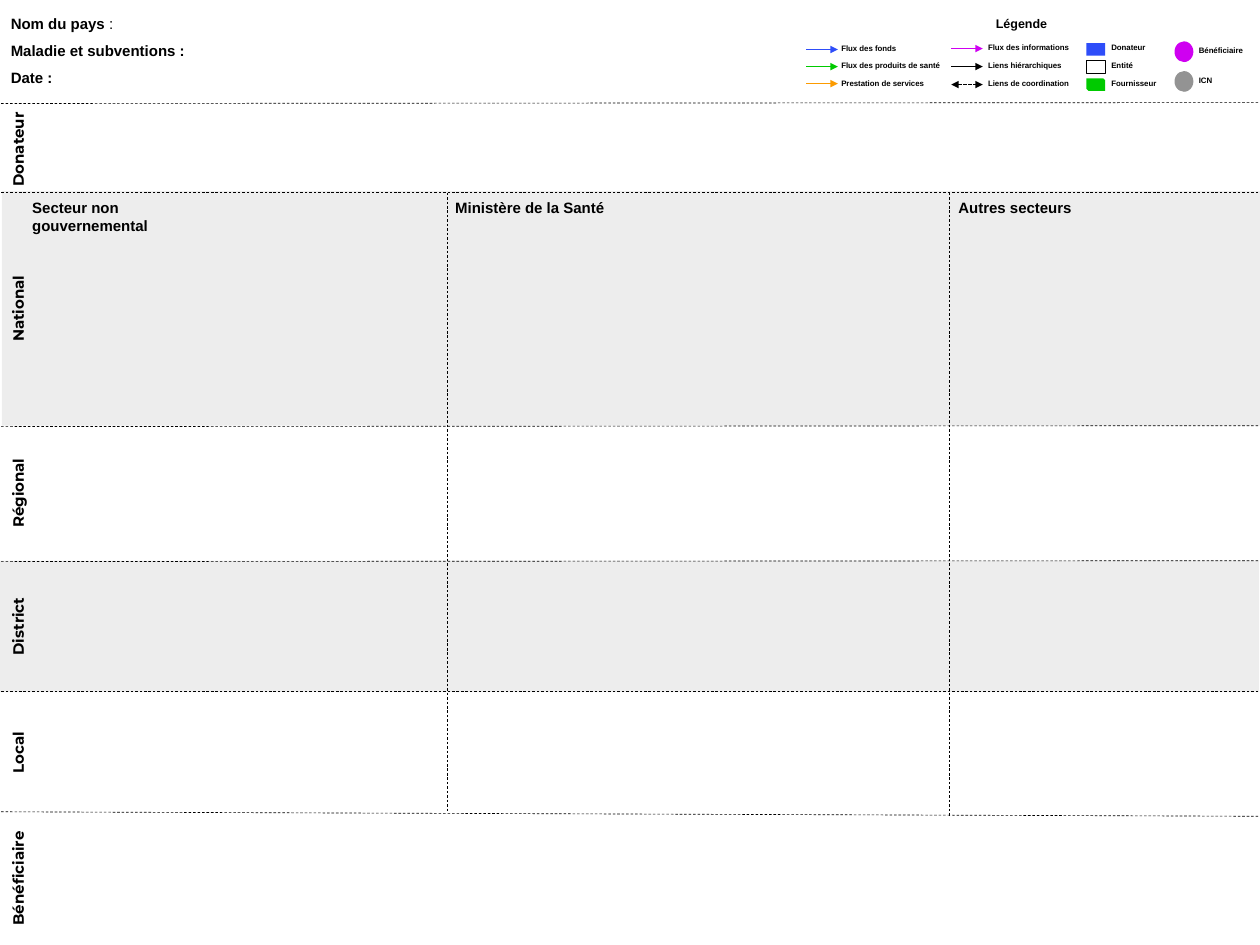
import pptx
import pptx.util
import pptx.dml.color
import pptx.enum.dml
import pptx.enum.shapes
import pptx.enum.text
import pptx.oxml
import pptx.oxml.ns

Inches = pptx.util.Inches
Pt = pptx.util.Pt
KIND = pptx.enum.shapes.MSO_SHAPE
LINK = pptx.enum.shapes.MSO_CONNECTOR
DASH = pptx.enum.dml.MSO_LINE
ALIGN = pptx.enum.text.PP_ALIGN
ANCHOR = pptx.enum.text.MSO_ANCHOR
BLACK, BLUE, GREEN = "000000", "2E4DF9", "00CA00"
ORANGE, PINK, GREY = "FC9B00", "CF00F1", "939393"


def paint(part, tone):
    """Give a fill or a line fill one solid colour."""
    part.solid()
    part.fore_color.rgb = pptx.dml.color.RGBColor.from_string(tone)


def put(item, vals):
    """Set attributes of an object from a dict."""
    for name, val in vals.items():
        setattr(item, name, val)


def add(node, tag, **vals):
    """Append a drawing element with attributes to a node."""
    child = pptx.oxml.parse_xml(f"<a:{tag} {pptx.oxml.ns.nsdecls('a')}/>")
    for name, val in vals.items():
        child.set(name, val)
    node.append(child)


def write(shapes, box, lines, size=12, font="Arial", frame={}, para={}, turn=0):
    """Place a text box; each line is a list of (text, bold) runs."""
    area = shapes.add_textbox(*map(Inches, box))
    area.rotation = turn
    put(area.text_frame, {"word_wrap": True, **frame})
    for num, runs in enumerate(lines):
        body = area.text_frame
        row = body.add_paragraph() if num else body.paragraphs[0]
        put(row, para)
        for text, bold in runs:
            run = row.add_run()
            run.text = text
            put(run.font, {"size": Pt(size), "name": font, "bold": bold})
            paint(run.font.fill, BLACK)


def shape(shapes, kind, box, fill=None, edge=None, alpha=None):
    """Place a preset shape with an optional fill, outline and opacity."""
    item = shapes.add_shape(kind, *map(Inches, box))
    item.shadow.inherit = False
    if fill:
        paint(item.fill, fill)
    else:
        item.fill.background()
    if edge:
        paint(item.line.fill, edge)
        item.line.width = Pt(0.5)
    else:
        item.line.fill.background()
    if alpha:
        add(item.fill._xPr.find(".//" + pptx.oxml.ns.qn("a:srgbClr")), "alpha", val=str(alpha * 1000))


def line(shapes, ends, tone=BLACK, width=0.5, dash=DASH.DASH, kind=LINK.STRAIGHT, tips=()):
    """Draw a connector, with a triangle at each named tip."""
    item = shapes.add_connector(kind, *map(Inches, ends))
    paint(item.line.fill, tone)
    put(item.line, {"width": Pt(width), "dash_style": dash})
    for tip in tips:
        add(item.line._get_or_add_ln(), tip, type="triangle")
    add(item._element.spPr, "effectLst")


def grid(shapes, left, width):
    """Draw the shaded bands, level names, sector names and dividers."""
    for top, high, shift in ((6.23, 1.46, -0.01), (2.12, 2.61, 0.04)):
        shape(shapes, KIND.RECTANGLE, (left + shift, top, width + 0.02, high), BLACK, alpha=7)
    levels = (("Donateur", 1.66, 1.04), ("National", 3.43, 2.6), ("Régional", 5.48, 1.5),
              ("District", 6.96, 1.46), ("Local", 8.36, 1.33), ("Bénéficiaire", 9.76, 1.48))
    for name, mid, span in levels:
        write(shapes, (0.2 - span / 2, mid - 0.2, span, 0.4), [[(name, True)]], font="Montserrat",
              frame={"vertical_anchor": ANCHOR.MIDDLE}, para={"alignment": ALIGN.CENTER}, turn=270)
    rules = ((1.14, 1.15), (2.14, 2.14), (4.73, 4.74), (6.23, 6.24), (7.68, 7.68), (9.07, 9.02))
    for right, start in rules:
        line(shapes, (left + width, right, left, start))
    for across, foot in ((4.97, 9.02), (10.55, 9.07)):
        line(shapes, (across, 2.14, across, foot))
    sectors = (("Secteur non gouvernemental", 0.26, 2.23), ("Ministère de la Santé", 4.96, 2),
               ("Autres secteurs", 10.55, 2.02))
    for name, start, wide in sectors:
        write(shapes, (start, 2.16, wide, 0.3), [[(name, True)]])


def head(shapes, box):
    """Write the country, disease and date fields."""
    lines = [[("Nom du pays", True), (" :", False)],
             [("Maladie et subventions :", True)], [("Date :", True)]]
    write(shapes, box, lines, frame={"margin_left": Inches(0.12)}, para={"line_spacing": 1.5})


def legend(shapes, left, top, width):
    """Draw the legend: arrows, boxes and circles with their labels."""
    write(shapes, (left, top, width, 0.27), [[("Légende", True)]], 10,
          frame={"vertical_anchor": ANCHOR.MIDDLE}, para={"alignment": ALIGN.CENTER})

    def label(text, across, down, wide, pad=0.1):
        write(shapes, (left + across, top + down, wide, 0.21), [[(text, True)]], 6.3,
              frame={"margin_left": Inches(pad)})

    one, both = ("tailEnd",), ("headEnd", "tailEnd")
    flows = (
        (0.08, 0.42, 0.37, 1.4, (("Flux des fonds", BLUE, None, one),
                                 ("Flux des produits de santé", GREEN, None, one),
                                 ("Prestation de services", ORANGE, None, one))),
        (1.69, 0.41, 2, 1.2, (("Flux des informations", PINK, None, one),
                              ("Liens hiérarchiques", BLACK, None, one),
                              ("Liens de coordination", BLACK, DASH.SQUARE_DOT, both))))
    for start, down, tab, wide, rows in flows:
        for num, (text, tone, dash, tips) in enumerate(rows):
            drop = down + num * (0.19 if tab < 1 else 0.2)
            far, mid = left + start, top + drop
            line(shapes, (far, mid, far + 0.35, mid), tone, 1, dash, LINK.ELBOW, tips)
            label(text, tab, drop - 0.11, wide)

    actors = (("Donateur", KIND.RECTANGLE, BLUE, None), ("Entité", KIND.RECTANGLE, None, BLACK),
              ("Fournisseur", KIND.SNIP_2_DIAG_RECTANGLE, GREEN, None))
    for num, (text, kind, fill, edge) in enumerate(actors):
        shape(shapes, kind, (left + 3.19, top + 0.35 + num * 0.195, 0.21, 0.14), fill, edge)
        label(text, 3.37, 0.3 + num * 0.2, 0.8)
    for num, (text, tone) in enumerate((("Bénéficiaire", PINK), ("ICN", GREY))):
        drop = 0.33 + num * 0.33
        shape(shapes, KIND.OVAL, (left + 4.17, top + drop, 0.21, 0.23), tone)
        label(text, 4.32, drop, 0.78, 0.12)


def main():
    """Build and save the slide."""
    deck = pptx.Presentation()
    put(deck, {"slide_width": Inches(14), "slide_height": Inches(10.5)})
    slide = deck.slides.add_slide(deck.slide_layouts[6])
    grid(slide.shapes, -0.02, 14)
    head(slide.shapes, (0, 0.01, 3.7, 1.35))
    legend(slide.shapes.add_group_shape().shapes, 8.88, 0.13, 4.94)
    deck.save("out.pptx")


if __name__ == "__main__":
    main()
